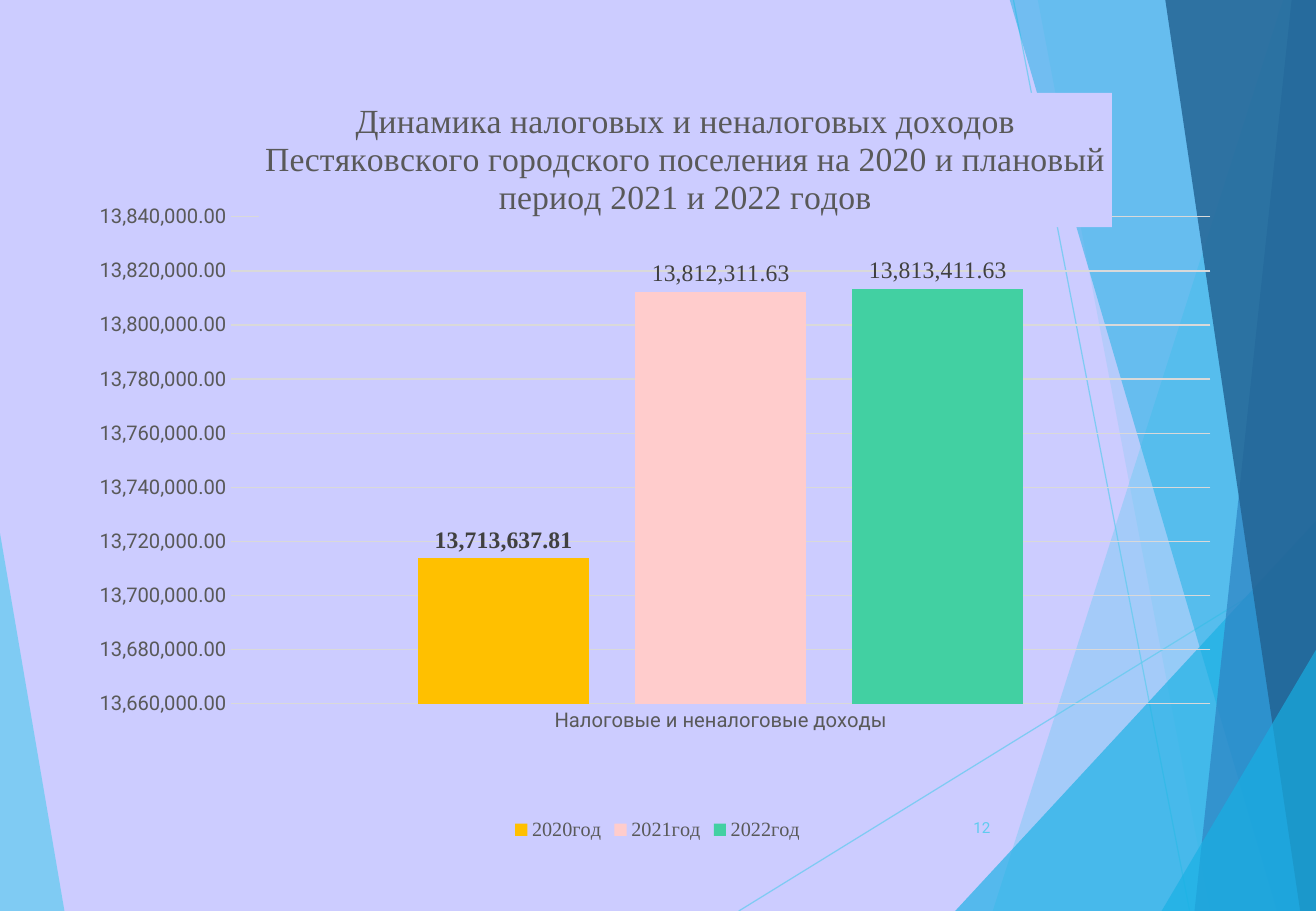
from lxml.etree import SubElement
from pptx import Presentation
from pptx.chart.data import CategoryChartData
from pptx.dml.color import RGBColor
from pptx.enum.chart import (XL_CHART_TYPE as ChartType, XL_LABEL_POSITION as LabelPosition,
                             XL_LEGEND_POSITION as LegendPosition, XL_TICK_MARK as TickMark)
from pptx.enum.shapes import MSO_CONNECTOR as Connector
from pptx.enum.text import MSO_ANCHOR as Anchor, PP_ALIGN as Align
from pptx.oxml import parse_xml
from pptx.oxml.ns import nsdecls, qn
from pptx.util import Inches, Pt

LAVENDER = RGBColor(0xCC, 0xCC, 0xFF)
SKY = RGBColor(0x5F, 0xCB, 0xEF)
AZURE = RGBColor(0x17, 0xB0, 0xE4)
BLUE = RGBColor(0x2E, 0x83, 0xC3)
NAVY = RGBColor(0x22, 0x62, 0x92)
GOLD = RGBColor(0xFF, 0xC0, 0x00)
PINK = RGBColor(0xFF, 0xCC, 0xCC)
GREEN = RGBColor(0x42, 0xD0, 0xA2)
GRID_GREY = RGBColor(0xD9, 0xD9, 0xD9)
TEXT_GREY = RGBColor(0x59, 0x59, 0x59)
LABEL_GREY = RGBColor(0x40, 0x40, 0x40)
SANS, SERIF = "Roboto", "Times New Roman"
MONEY = "#,##0.00"

TITLE = ("Динамика налоговых и неналоговых доходов Пестяковского "
         "городского поселения на 2020 и плановый период 2021 и 2022 годов")
CATEGORY = "Налоговые и неналоговые доходы"
YEARS = [("2020год", 13713637.81, GOLD, True),
         ("2021год", 13812311.63, PINK, False),
         ("2022год", 13813411.63, GREEN, False)]
RAYS = [((56.14, 100), (100, 60.93)), ((77.01, 0), (90.4, 100))]
LEFT_FACET = ([(0, 58.5), (4.9, 100), (0, 100)], SKY, 70)
RIGHT_FACETS = [
    ([(97.51, 0), (75.44, 100), (100, 100), (100, 0)], SKY, 36),
    ([(78.86, 0), (91.97, 100), (100, 100), (100, 0)], SKY, 20),
    ([(72.58, 100), (100, 57.2), (100, 100)], AZURE, 66),
    ([(76.73, 0), (97.05, 100), (100, 100), (100, 0)], AZURE, 50),
    ([(98.15, 0), (90.77, 100), (100, 100), (100, 0)], BLUE, 70),
    ([(88.55, 0), (98.8, 100), (100, 100), (100, 0)], NAVY, 82),
    ([(88.27, 100), (100, 71.33), (100, 100)], AZURE, 66),
]


class SlideBuilder:
    """Draws styled elements on one slide, with lengths in percent of its size."""

    def __init__(self, presentation):
        """Add a blank slide with the lavender background."""
        self.width, self.height = presentation.slide_width, presentation.slide_height
        self.slide = presentation.slides.add_slide(presentation.slide_layouts[6])
        self.shapes = self.slide.shapes
        background = self.slide.background.fill
        background.solid()
        background.fore_color.rgb = LAVENDER

    def point(self, column, row):
        """Turn percentages into slide coordinates."""
        return round(self.width * column / 100), round(self.height * row / 100)

    @staticmethod
    def set_opacity(shape, percent):
        """Make the shape's own colour partly transparent."""
        for color in shape.element.spPr.iter(qn("a:srgbClr")):
            SubElement(color, qn("a:alpha")).set("val", str(percent * 1000))

    @staticmethod
    def style_font(font, name, size, color, bold=False):
        """Set the typeface, size, colour and weight."""
        font.name, font.size, font.bold = name, Pt(size), bold
        font.color.rgb = color

    @staticmethod
    def place(element, index, **layout):
        """Give a chart part a manual layout, in shares of the chart."""
        for old in element.findall(qn("c:layout")):
            element.remove(old)
        settings = "".join(f'<c:{key} val="{value}"/>' for key, value in layout.items())
        element.insert(index, parse_xml(
            f'<c:layout {nsdecls("c")}><c:manualLayout>{settings}</c:manualLayout></c:layout>'))

    def facet(self, corners, color, opacity):
        """Draw a translucent polygon."""
        start, *rest = [self.point(*corner) for corner in corners]
        builder = self.shapes.build_freeform(*start)
        builder.add_line_segments(rest)
        shape = builder.convert_to_shape()
        shape.shadow.inherit = False
        shape.fill.solid()
        shape.fill.fore_color.rgb = color
        shape.line.fill.background()
        self.set_opacity(shape, opacity)

    def ray(self, start, end):
        """Draw a thin translucent line."""
        line = self.shapes.add_connector(Connector.STRAIGHT, *self.point(*start), *self.point(*end))
        line.line.color.rgb = SKY
        line.line.width = Pt(0.75)
        self.set_opacity(line, 70)
        SubElement(line.element.spPr, qn("a:effectLst"))

    def text(self, words, left, top, width, height):
        """Write a small right-aligned text."""
        box = self.shapes.add_textbox(*self.point(left, top), *self.point(width, height))
        frame = box.text_frame
        frame.word_wrap = True
        frame.vertical_anchor = Anchor.MIDDLE
        paragraph = frame.paragraphs[0]
        paragraph.text = words
        paragraph.alignment = Align.RIGHT
        self.style_font(paragraph.font, SANS, 9, SKY)

    def column_chart(self, left, top, width, height):
        """Draw the revenue columns, one series a year."""
        data = CategoryChartData(number_format=MONEY)
        data.categories = [CATEGORY]
        for name, value, _, _ in YEARS:
            data.add_series(name, [value])
        chart = self.shapes.add_chart(ChartType.COLUMN_CLUSTERED, *self.point(left, top),
                                      *self.point(width, height), data).chart
        self.style_font(chart.font, SANS, 12, TEXT_GREY)
        plot = chart.plots[0]
        plot.gap_width, plot.overlap, plot.vary_by_categories = 219, -27, False
        for series, (_, _, color, bold) in zip(plot.series, YEARS):
            self.style_series(series, color, bold)
        self.style_axes(chart)
        self.style_title(chart)
        chart.has_legend = True
        chart.legend.position = LegendPosition.BOTTOM
        chart.legend.include_in_layout = False
        self.style_font(chart.legend.font, SERIF, 12, TEXT_GREY)
        self.place(chart.element.find(".//" + qn("c:plotArea")), 0, layoutTarget="inner",
                   xMode="edge", yMode="edge", x=0.116, y=0.189, w=0.882, h=0.628)

    def style_series(self, series, color, bold):
        """Colour a series and show its value above the column."""
        series.format.fill.solid()
        series.format.fill.fore_color.rgb = color
        series.invert_if_negative = False
        labels = series.data_labels
        labels.show_value = True
        labels.position = LabelPosition.OUTSIDE_END
        labels.number_format, labels.number_format_is_linked = MONEY, False
        self.style_font(labels.font, SERIF, 14, LABEL_GREY, bold)

    def style_axes(self, chart):
        """Set the scale, grid lines and axis texts."""
        values, categories = chart.value_axis, chart.category_axis
        for axis in (values, categories):
            axis.major_tick_mark = axis.minor_tick_mark = TickMark.NONE
            self.style_font(axis.tick_labels.font, SANS, 12, TEXT_GREY)
        values.minimum_scale, values.maximum_scale, values.major_unit = 13660000, 13840000, 20000
        values.tick_labels.number_format = MONEY
        values.tick_labels.number_format_is_linked = False
        values.format.line.fill.background()
        for line in (values.major_gridlines.format.line, categories.format.line):
            line.color.rgb = GRID_GREY
            line.width = Pt(0.75)

    def style_title(self, chart):
        """Write the chart title on a lavender panel."""
        title = chart.chart_title
        paragraph = title.text_frame.paragraphs[0]
        paragraph.text = TITLE
        self.style_font(paragraph.font, SERIF, 20, TEXT_GREY)
        title.include_in_layout = False
        title.format.fill.solid()
        title.format.fill.fore_color.rgb = LAVENDER
        self.place(chart.element.find(".//" + qn("c:title")), 1,
                   xMode="edge", yMode="edge", x=0.141, y=0.029)


def main():
    """Build the revenue slide."""
    presentation = Presentation()
    presentation.slide_width, presentation.slide_height = Inches(10.83), Inches(7.5)
    builder = SlideBuilder(presentation)
    builder.facet(*LEFT_FACET)
    for ray in RAYS:
        builder.ray(*ray)
    for facet in RIGHT_FACETS:
        builder.facet(*facet)
    builder.column_chart(7.57, 7.73, 84.58, 85.07)
    builder.text("12", 70.54, 88.13, 5.63, 5.33)
    presentation.save("out.pptx")


if __name__ == "__main__":
    main()
